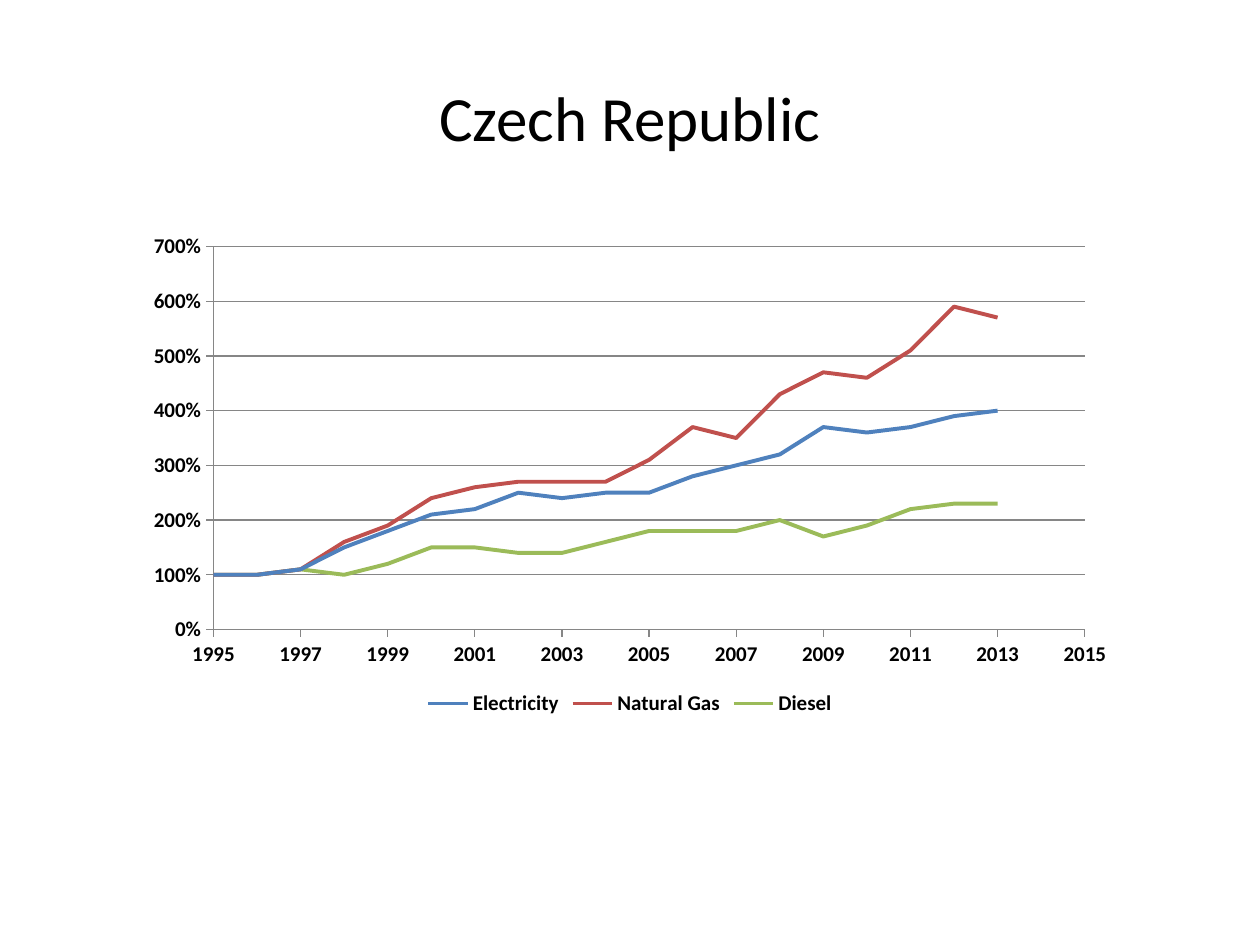
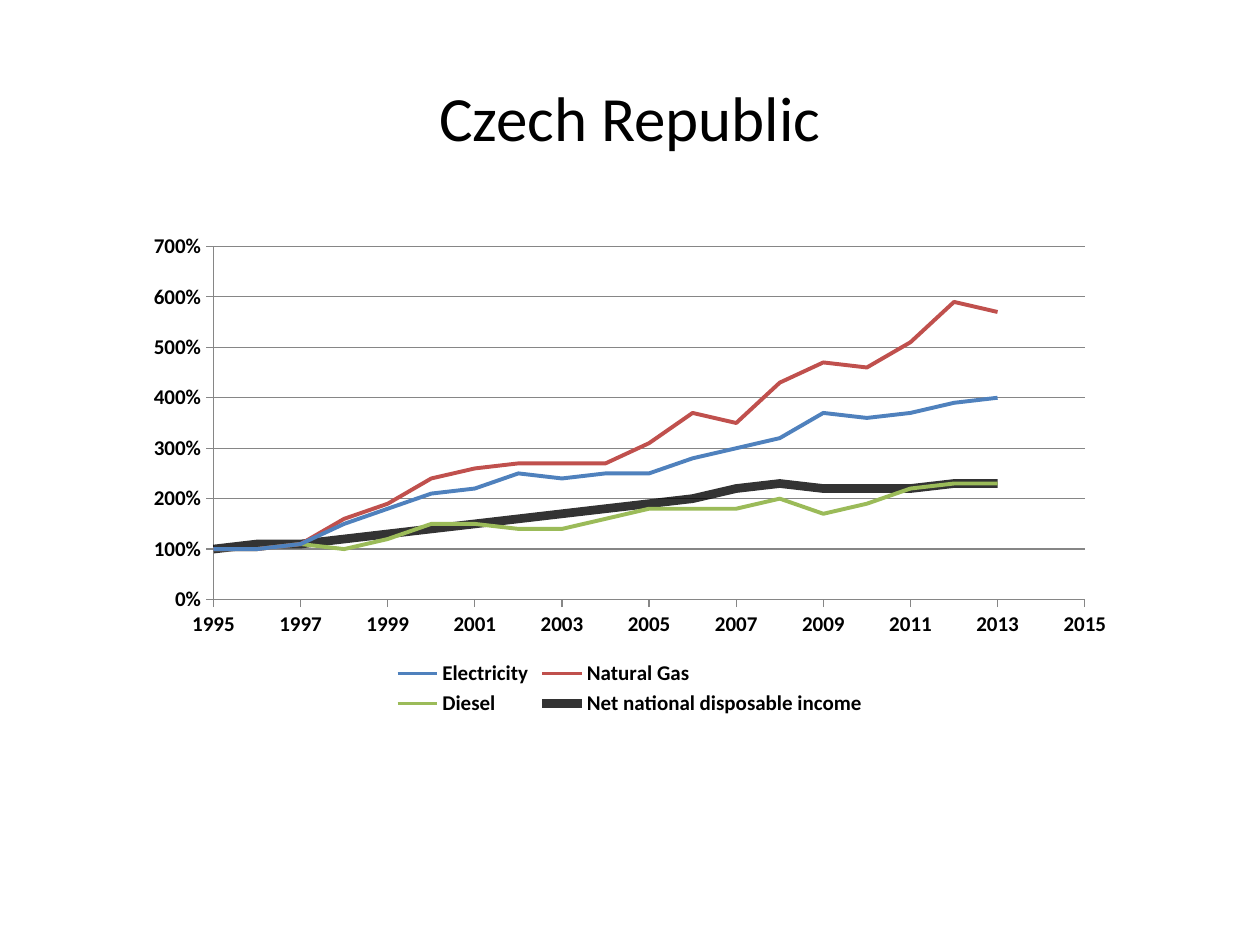
import pptx
import pptx.util
import pptx.chart.data
import pptx.dml.color
import pptx.enum.chart
import pptx.enum.text
import pptx.oxml
import pptx.oxml.ns

HEADING = "Czech Republic"
FIRST_YEAR, LAST_YEAR, YEAR_STEP = 1995, 2015, 2
TOP_RATIO = 7

ELECTRICITY = {
    "name": "Electricity", "color": "4F81BD", "width": 2.25, "opacity": 100,
    "ratios": [1, 1, 1.1, 1.5, 1.8, 2.1, 2.2, 2.5, 2.4, 2.5,
               2.5, 2.8, 3, 3.2, 3.7, 3.6, 3.7, 3.9, 4]}
NATURAL_GAS = {
    "name": "Natural Gas", "color": "C0504D", "width": 2.25, "opacity": 100,
    "ratios": [1, 1, 1.1, 1.6, 1.9, 2.4, 2.6, 2.7, 2.7, 2.7,
               3.1, 3.7, 3.5, 4.3, 4.7, 4.6, 5.1, 5.9, 5.7]}
DIESEL = {
    "name": "Diesel", "color": "9BBB59", "width": 2.25, "opacity": 100,
    "ratios": [1, 1, 1.1, 1, 1.2, 1.5, 1.5, 1.4, 1.4, 1.6,
               1.8, 1.8, 1.8, 2, 1.7, 1.9, 2.2, 2.3, 2.3]}
INCOME = {
    "name": "Net national disposable income", "color": "000000", "width": 5, "opacity": 80,
    "ratios": [1, 1.1, 1.1, 1.2, 1.3, 1.4, 1.5, 1.6, 1.7, 1.8,
               1.9, 2, 2.2, 2.3, 2.2, 2.2, 2.2, 2.3, 2.3]}

ENERGY = [ELECTRICITY, NATURAL_GAS, DIESEL]
SLIDES = [ENERGY, ENERGY + [INCOME]]

FONT = "Calibri"
INK, AXIS_GREY = "000000", "868686"
SLIDE_SIZE = (1260, 945)
HEADING_BOX = (63, 37, 1134, 158)
CHART_BOX = (134, 224, 992, 497)
EMU_PER_PX = 914400 / 126


def px(*lengths):
    return [pptx.util.Emu(round(length * EMU_PER_PX)) for length in lengths]


def rgb(color):
    return pptx.dml.color.RGBColor.from_string(color)


def style_font(font, size, bold=False):
    font.name = FONT
    font.size = pptx.util.Pt(size)
    font.bold = bold
    font.color.rgb = rgb(INK)


def style_line(line, color, width):
    line.color.rgb = rgb(color)
    line.width = pptx.util.Pt(width)


def add_heading(slide):
    frame = slide.shapes.add_textbox(*px(*HEADING_BOX)).text_frame
    frame.word_wrap = True
    frame.vertical_anchor = pptx.enum.text.MSO_ANCHOR.MIDDLE
    frame.text = HEADING
    heading = frame.paragraphs[0]
    heading.alignment = pptx.enum.text.PP_ALIGN.CENTER
    style_font(heading.runs[0].font, 36)


def style_axis(axis, low, high, step, number_format):
    axis.minimum_scale, axis.maximum_scale, axis.major_unit = low, high, step
    axis.major_tick_mark = pptx.enum.chart.XL_TICK_MARK.OUTSIDE
    axis.minor_tick_mark = pptx.enum.chart.XL_TICK_MARK.NONE
    axis.tick_labels.number_format = number_format
    axis.tick_labels.number_format_is_linked = False
    style_font(axis.tick_labels.font, 12, True)
    style_line(axis.format.line, AXIS_GREY, 0.75)


def style_series(series, indicator):
    style_line(series.format.line, indicator["color"], indicator["width"])
    series.marker.style = pptx.enum.chart.XL_MARKER_STYLE.NONE
    if indicator["opacity"] < 100:
        line_color = series._element.find(".//" + pptx.oxml.ns.qn("a:srgbClr"))
        alpha = pptx.oxml.parse_xml(
            f'<a:alpha {pptx.oxml.ns.nsdecls("a")} val="{indicator["opacity"] * 1000}"/>')
        line_color.append(alpha)


def add_price_chart(slide, indicators):
    prices = pptx.chart.data.XyChartData(number_format="0%")
    for indicator in indicators:
        points = prices.add_series(indicator["name"])
        for year, ratio in enumerate(indicator["ratios"], FIRST_YEAR):
            points.add_data_point(year, ratio)

    chart = slide.shapes.add_chart(
        pptx.enum.chart.XL_CHART_TYPE.XY_SCATTER_LINES_NO_MARKERS,
        *px(*CHART_BOX), prices).chart
    chart.has_title = False
    style_font(chart.font, 10)
    chart.has_legend = True
    chart.legend.position = pptx.enum.chart.XL_LEGEND_POSITION.BOTTOM
    chart.legend.include_in_layout = False
    style_font(chart.legend.font, 12, True)

    style_axis(chart.category_axis, FIRST_YEAR, LAST_YEAR, YEAR_STEP, "0")
    chart.category_axis.has_major_gridlines = False
    style_axis(chart.value_axis, 0, TOP_RATIO, 1, "0%")
    chart.value_axis.has_major_gridlines = True
    style_line(chart.value_axis.major_gridlines.format.line, AXIS_GREY, 0.75)

    plot = chart.plots[0]
    plot.vary_by_categories = False
    for series, indicator in zip(plot.series, indicators):
        style_series(series, indicator)


def main():
    deck = pptx.Presentation()
    deck.slide_width, deck.slide_height = px(*SLIDE_SIZE)
    for indicators in SLIDES:
        slide = deck.slides.add_slide(deck.slide_layouts[6])
        add_heading(slide)
        add_price_chart(slide, indicators)
    deck.save("out.pptx")


if __name__ == "__main__":
    main()
